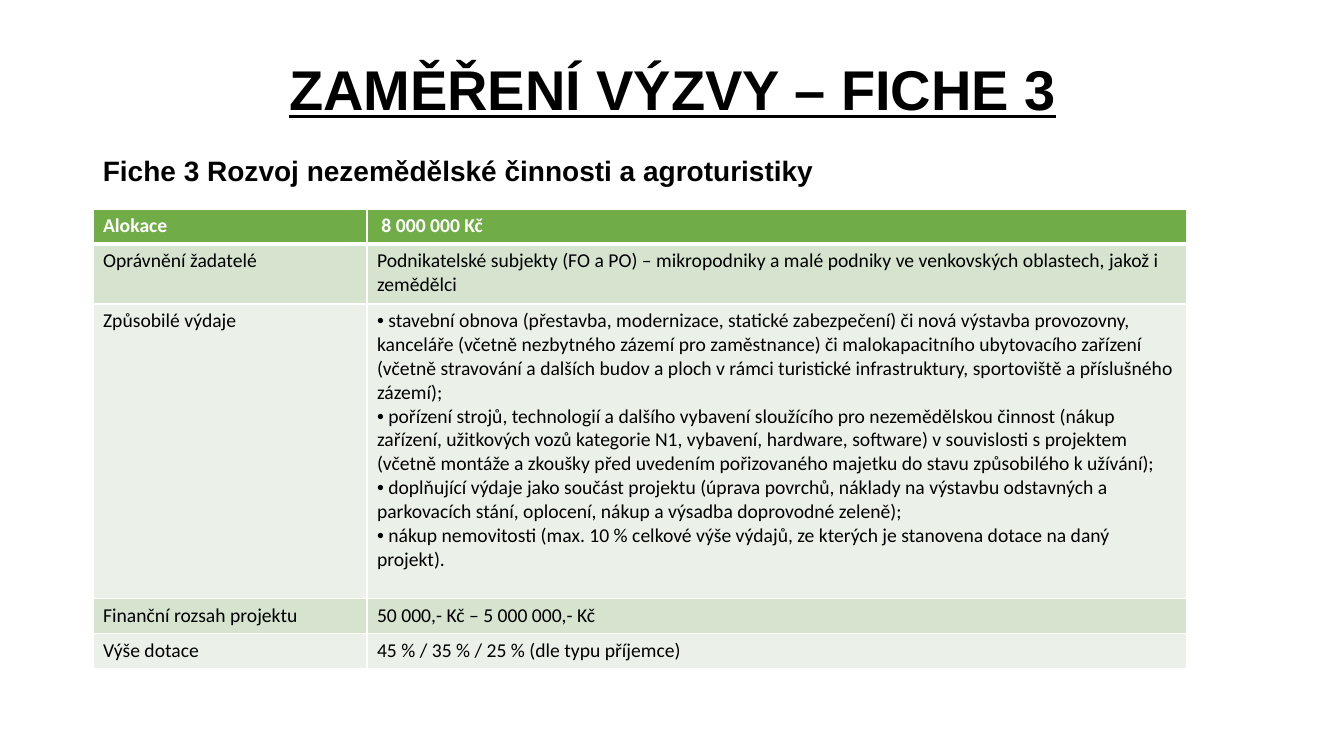
from lxml.etree import SubElement
from pptx import Presentation
from pptx.dml.color import RGBColor
from pptx.enum.text import MSO_ANCHOR, MSO_AUTO_SIZE, PP_ALIGN
from pptx.oxml.ns import qn
from pptx.util import Pt

TITLE = "ZAMĚŘENÍ VÝZVY – FICHE 3"
SUBTITLE = "Fiche 3 Rozvoj nezemědělské činnosti a agroturistiky"
EXPENSES = [
    "stavební obnova (přestavba, modernizace, statické zabezpečení) či nová výstavba provozovny, "
    "kanceláře (včetně nezbytného zázemí pro zaměstnance) či malokapacitního ubytovacího zařízení "
    "(včetně stravování a dalších budov a ploch v rámci turistické infrastruktury, sportoviště a "
    "příslušného zázemí);",
    "pořízení strojů, technologií a dalšího vybavení sloužícího pro nezemědělskou činnost (nákup "
    "zařízení, užitkových vozů kategorie N1, vybavení, hardware, software) v souvislosti s projektem "
    "(včetně montáže a zkoušky před uvedením pořizovaného majetku do stavu způsobilého k užívání);",
    "doplňující výdaje jako součást projektu (úprava povrchů, náklady na výstavbu odstavných a "
    "parkovacích stání, oplocení, nákup a výsadba doprovodné zeleně);",
    "nákup nemovitosti (max. 10 % celkové výše výdajů, ze kterých je stanovena dotace na daný "
    "projekt).",
]
# Row height in px, label, value; a list value is bulleted
ROWS = [
    (35, "Alokace", " 8 000 000 Kč"),
    (60, "Oprávnění žadatelé",
     "Podnikatelské subjekty (FO a PO) – mikropodniky a malé podniky ve venkovských oblastech, "
     "jakož i zemědělci"),
    (295, "Způsobilé výdaje", EXPENSES),
    (35, "Finanční rozsah projektu", "50 000,- Kč – 5 000 000,- Kč"),
    (35, "Výše dotace", "45 % / 35 % / 25 % (dle typu příjemce)"),
]
COLUMN_WIDTHS = (274, 820)
LEFT, TABLE_TOP = 93, 209

BLACK = RGBColor(0x00, 0x00, 0x00)
WHITE = RGBColor(0xFF, 0xFF, 0xFF)
HEADER_GREEN = RGBColor(0x70, 0xAD, 0x47)
BAND_GREENS = (RGBColor(0xEB, 0xF1, 0xE9), RGBColor(0xD5, 0xE3, 0xCF))


def px(length):
    return round(length * 914400 / 100.8)


def style_font(font, name, size, color, bold):
    font.name = name
    font.size = Pt(size)
    font.color.rgb = color
    font.bold = bold


def add_heading(slide, text, box, size):
    shape = slide.shapes.add_textbox(*map(px, box))
    paragraph = shape.text_frame.paragraphs[0]
    paragraph.text = text
    paragraph.line_spacing = 0.9
    style_font(paragraph.runs[0].font, "Arial", size, BLACK, True)
    return shape.text_frame


def add_borders(cell, row):
    properties = cell._tc.get_or_add_tcPr()
    widths = {"lnL": 1, "lnR": 1, "lnT": 3 if row == 1 else 1, "lnB": 3 if row == 0 else 1}
    for edge, width in widths.items():
        line = SubElement(properties, qn(f"a:{edge}"), w=str(Pt(width)))
        fill = SubElement(line, qn("a:solidFill"))
        SubElement(fill, qn("a:srgbClr"), val=str(WHITE))


def add_bullet(paragraph):
    """Puts the bullet inline, so that wrapped lines start under it."""
    properties = paragraph._p.get_or_add_pPr()
    properties.set("marL", "0")
    properties.set("indent", "0")
    SubElement(properties, qn("a:buFont"), typeface="Arial")
    SubElement(properties, qn("a:buChar"), char="•")


def fill_cell(cell, row, content):
    is_header = row == 0
    is_list = isinstance(content, list)
    add_borders(cell, row)
    cell.fill.solid()
    cell.fill.fore_color.rgb = HEADER_GREEN if is_header else BAND_GREENS[row % 2]
    cell.text_frame.text = "\n".join(f" {item}" for item in content) if is_list else content
    for paragraph in cell.text_frame.paragraphs:
        if is_list:
            add_bullet(paragraph)
        style_font(paragraph.runs[0].font, "Calibri", 14, WHITE if is_header else BLACK, is_header)


def add_fiche_table(slide):
    heights = [height for height, *_ in ROWS]
    table = slide.shapes.add_table(
        len(ROWS), len(COLUMN_WIDTHS), px(LEFT), px(TABLE_TOP),
        px(sum(COLUMN_WIDTHS)), px(sum(heights))).table
    for column, width in zip(table.columns, COLUMN_WIDTHS):
        column.width = px(width)
    for row, (height, *contents) in enumerate(ROWS):
        table.rows[row].height = px(height)
        for column, content in enumerate(contents):
            fill_cell(table.cell(row, column), row, content)


def main():
    presentation = Presentation()
    presentation.slide_width, presentation.slide_height = px(1344), px(756)
    slide = presentation.slides.add_slide(presentation.slide_layouts[6])

    title = add_heading(slide, TITLE, (LEFT, 40, 1159, 105), 40)
    title.word_wrap = True
    title.vertical_anchor = MSO_ANCHOR.MIDDLE
    title.paragraphs[0].alignment = PP_ALIGN.CENTER
    title.paragraphs[0].runs[0].font.underline = True

    subtitle = add_heading(slide, SUBTITLE, (LEFT, 152, 736, 40), 20)
    subtitle.word_wrap = False
    subtitle.auto_size = MSO_AUTO_SIZE.SHAPE_TO_FIT_TEXT

    add_fiche_table(slide)
    presentation.save("out.pptx")


if __name__ == "__main__":
    main()
